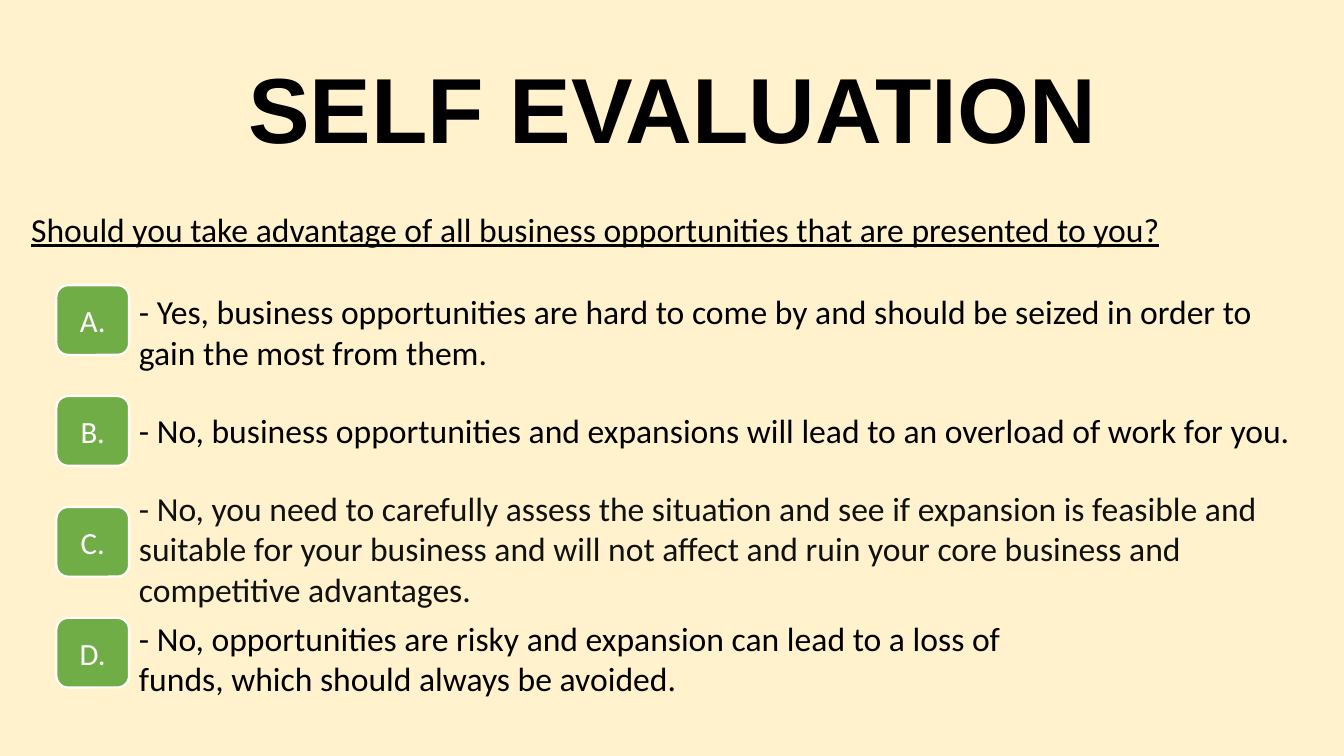
from dataclasses import dataclass

from pptx import Presentation
from pptx.dml.color import RGBColor
from pptx.enum.shapes import MSO_SHAPE
from pptx.enum.text import MSO_ANCHOR, MSO_AUTO_SIZE, PP_ALIGN
from pptx.util import Inches, Pt

TITLE = "SELF EVALUATION"
QUESTION = "Should you take advantage of all business opportunities that are presented to you?"
# letter, answer, text box (top, width, height), colour name, wraps
ANSWERS = [
    ("A.", "- Yes, business opportunities are hard to come by and should be seized "
           "in order to gain the most from them.",
     (2.84, 11.5, 0.91), "ink", True),
    ("B.", "- No, business opportunities and expansions will lead to an overload "
           "of work for you.",
     (4.02, 11.8, 0.5), "ink", False),
    ("C.", "- No, you need to carefully assess the situation and see if expansion is "
           "feasible and suitable for your business and will not affect and ruin your "
           "core business and competitive advantages.",
     (4.79, 12.14, 1.31), "soft_ink", True),
    ("D.", "- No, opportunities are risky and expansion can lead to a loss of funds, "
           "which should always be avoided.",
     (6.08, 9.41, 0.91), "ink", True),
]

TITLE_BOX = (0.92, 0.4, 11.5, 1.45)
QUESTION_BOX = (0.21, 2.02, 11.81, 0.5)
BADGE_LEFT, BADGE_TOP, BADGE_WIDTH, BADGE_HEIGHT = 0.56, 2.83, 0.72, 0.69
BADGE_PITCH = 1.1
ANSWER_LEFT = BADGE_LEFT + BADGE_WIDTH


@dataclass(frozen=True)
class Theme:
    background: RGBColor = RGBColor.from_string("FFF2CC")
    badge: RGBColor = RGBColor.from_string("70AD47")
    white: RGBColor = RGBColor.from_string("FFFFFF")
    ink: RGBColor = RGBColor.from_string("000000")
    soft_ink: RGBColor = RGBColor.from_string("111111")
    heading_font: str = "Arial"
    body_font: str = "Calibri"
    title_size: Pt = Pt(66)
    body_size: Pt = Pt(24)
    badge_size: Pt = Pt(22)


THEME = Theme()


def inches(box):
    return [Inches(length) for length in box]


def write(frame, text, color, align=PP_ALIGN.LEFT, **font_format):
    """Fill the frame with one formatted paragraph and return it."""
    paragraph = frame.paragraphs[0]
    paragraph.alignment = align
    run = paragraph.add_run()
    run.text = text
    run.font.color.rgb = color
    settings = {"name": THEME.body_font, "size": THEME.body_size} | font_format
    for attribute, value in settings.items():
        setattr(run.font, attribute, value)
    return paragraph


def add_title(slide):
    title = slide.shapes.title
    title.left, title.top, title.width, title.height = inches(TITLE_BOX)
    title.text_frame.vertical_anchor = MSO_ANCHOR.MIDDLE
    title.text_frame.auto_size = MSO_AUTO_SIZE.NONE
    heading = write(title.text_frame, TITLE, THEME.ink, PP_ALIGN.CENTER,
                    name=THEME.heading_font, size=THEME.title_size, bold=True)
    heading.line_spacing = 0.9


def add_text(slide, box, text, color, wraps=True, **font_format):
    frame = slide.shapes.add_textbox(*inches(box)).text_frame
    frame.word_wrap = wraps
    frame.auto_size = MSO_AUTO_SIZE.SHAPE_TO_FIT_TEXT
    write(frame, text, color, **font_format)


def add_badge(slide, row, letter):
    box = (BADGE_LEFT, BADGE_TOP + row * BADGE_PITCH, BADGE_WIDTH, BADGE_HEIGHT)
    badge = slide.shapes.add_shape(MSO_SHAPE.ROUNDED_RECTANGLE, *inches(box))
    badge.shadow.inherit = False
    badge.fill.solid()
    badge.fill.fore_color.rgb = THEME.badge
    badge.line.color.rgb = THEME.white
    badge.line.width = Pt(1.5)
    badge.text_frame.vertical_anchor = MSO_ANCHOR.MIDDLE
    write(badge.text_frame, letter, THEME.white, PP_ALIGN.CENTER, size=THEME.badge_size)


def main():
    deck = Presentation()
    deck.slide_width, deck.slide_height = Inches(13.33), Inches(7.5)
    slide = deck.slides.add_slide(deck.slide_layouts.get_by_name("Title Only"))
    slide.background.fill.solid()
    slide.background.fill.fore_color.rgb = THEME.background

    add_title(slide)
    add_text(slide, QUESTION_BOX, QUESTION, THEME.ink, underline=True)
    for row, (letter, answer, box, color, wraps) in enumerate(ANSWERS):
        add_badge(slide, row, letter)
        add_text(slide, (ANSWER_LEFT, *box), answer, getattr(THEME, color), wraps)

    deck.save("out.pptx")


if __name__ == "__main__":
    main()
